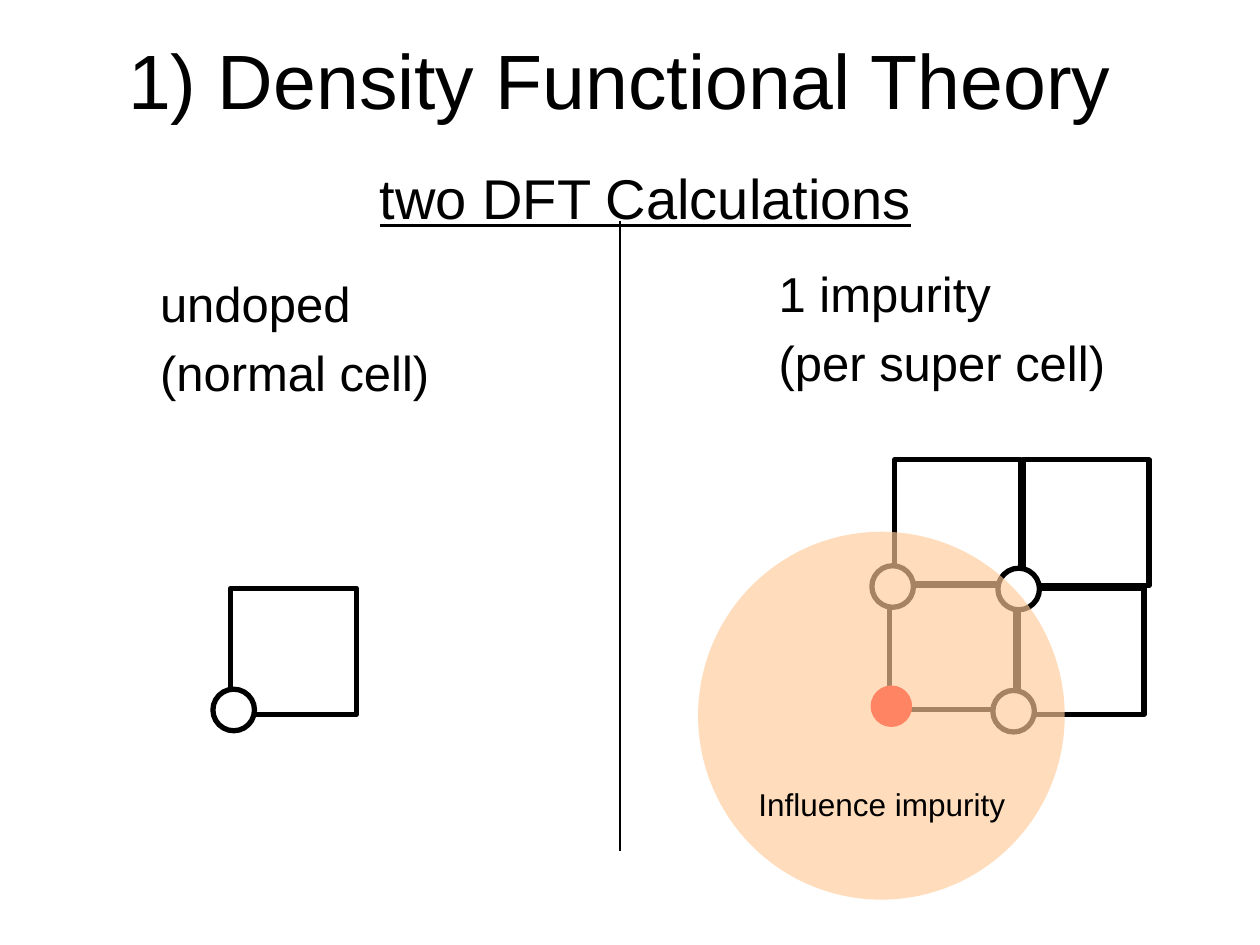
import pptx
import pptx.util
import pptx.dml.color
import pptx.enum.shapes
import pptx.enum.text
import pptx.oxml.ns
import lxml.etree

INCH = pptx.util.Inches
SHAPES = pptx.enum.shapes.MSO_SHAPE
ALIGN = pptx.enum.text.PP_ALIGN
CELL, ATOM = 1, 0.33  # side of a unit cell, diameter of an atom


def color(hex_code):
    return pptx.dml.color.RGBColor.from_string(hex_code)


def sub(parent, tag, **attributes):
    return lxml.etree.SubElement(parent, pptx.oxml.ns.qn(tag), attributes)


def write(holder, box, lines, size, align=ALIGN.LEFT, underline=None,
          anchor=pptx.enum.text.MSO_ANCHOR.TOP):
    """Place a text holder and format its lines as plain paragraphs."""
    holder.left, holder.top, holder.width, holder.height = map(INCH, box)
    frame = holder.text_frame
    frame.text = "\n".join(lines)
    frame.word_wrap = True
    frame.auto_size = pptx.enum.text.MSO_AUTO_SIZE.NONE
    frame.vertical_anchor = anchor
    for index, paragraph in enumerate(frame.paragraphs):
        properties = paragraph._p.get_or_add_pPr()
        properties.set("marL", "0")
        properties.set("indent", "0")
        sub(properties, "a:buNone")
        paragraph.alignment = align
        paragraph.space_before = pptx.util.Pt(6 if index else 0)
        for run in paragraph.runs:
            run.font.name = "Arial"
            run.font.size = pptx.util.Pt(size)
            run.font.underline = underline
            run.font.color.rgb = color("000000")


def add_outline(slide, kind, box, fill=None, line="000000"):
    shape = slide.shapes.add_shape(kind, *map(INCH, box))
    shape.shadow.inherit = False
    if fill:
        shape.fill.solid()
        shape.fill.fore_color.rgb = color(fill)
    else:
        shape.fill.background()
    if line:
        shape.line.color.rgb = color(line)
        shape.line.width = pptx.util.Pt(3)
    else:
        shape.line.fill.background()
    return shape


def add_cell(slide, left, top):
    add_outline(slide, SHAPES.RECTANGLE, (left, top, CELL, CELL))


def add_atom(slide, left, top, fill="FFFFFF", line="000000"):
    add_outline(slide, SHAPES.OVAL, (left, top, ATOM, ATOM), fill, line)


def add_divider(slide, x, top, bottom):
    divider = slide.shapes.add_connector(
        pptx.enum.shapes.MSO_CONNECTOR.STRAIGHT, *map(INCH, (x, top, x, bottom)))
    divider.line.color.rgb = color("000000")
    divider.line.width = pptx.util.Pt(0.75)
    sub(divider._element.spPr, "a:effectLst")


def add_influence(slide, box):
    zone = add_outline(slide, SHAPES.OVAL, box, "FFCC99", None)
    fill = zone._element.spPr.find(pptx.oxml.ns.qn("a:solidFill"))
    sub(fill[0], "a:alpha", val="65000")


def main():
    deck = pptx.Presentation()
    deck.slide_width, deck.slide_height = INCH(10), INCH(7.5)
    slide = deck.slides.add_slide(deck.slide_layouts[3])
    title, undoped, doped = slide.placeholders

    # Headings
    write(title, (0.42, 0, 9, 1.25), ["1) Density Functional Theory"], 44,
          ALIGN.CENTER, anchor=pptx.enum.text.MSO_ANCHOR.MIDDLE)
    write(undoped, (1.17, 2.12, 2.77, 1.13), ["undoped", "(normal cell)"], 28)
    write(doped, (6.08, 2.04, 2.89, 1.13), ["1 impurity", "(per super cell)"], 28)
    subtitle = slide.shapes.add_textbox(0, 0, 0, 0)
    write(subtitle, (0.5, 1.25, 9.25, 0.63), ["two DFT Calculations"], 32,
          ALIGN.CENTER, underline=True)
    add_divider(slide, 4.92, 1.75, 6.75)

    # Normal cell
    add_cell(slide, 1.83, 4.67)
    add_atom(slide, 1.69, 5.47)

    # Super cell with its impurity
    for left, top in ((7.1, 3.65), (8.12, 3.65), (7.06, 4.63)):
        add_cell(slide, left, top)
    add_atom(slide, 6.91, 5.44, "FF0000", None)
    add_cell(slide, 8.08, 4.67)
    for left, top in ((6.92, 4.49), (7.92, 4.51), (7.88, 5.48)):
        add_atom(slide, left, top)

    # Zone of influence
    add_influence(slide, (5.54, 4.22, 2.91, 2.92))
    influence = slide.shapes.add_textbox(0, 0, 0, 0)
    write(influence, (5.92, 6.18, 2.33, 0.4), ["Influence impurity"], 18)

    deck.save("out.pptx")


if __name__ == "__main__":
    main()
